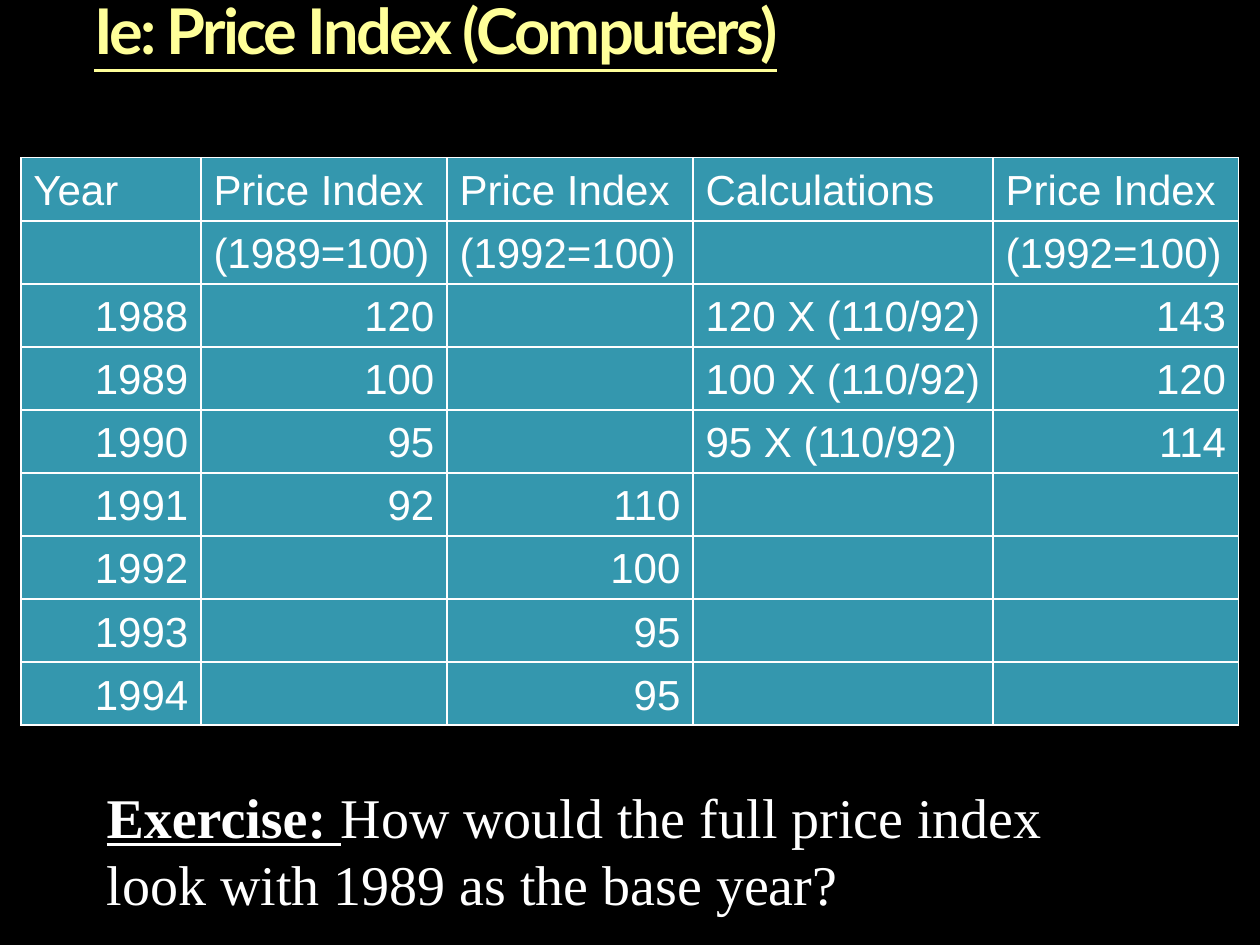
import lxml.etree
import pptx
import pptx.dml.color
import pptx.enum.text
import pptx.oxml.ns
import pptx.util

Cm, Pt = pptx.util.Cm, pptx.util.Pt
qn = pptx.oxml.ns.qn
ALIGN = pptx.enum.text.PP_ALIGN
ANCHOR = pptx.enum.text.MSO_ANCHOR
GROW = pptx.enum.text.MSO_AUTO_SIZE.SHAPE_TO_FIT_TEXT

WHITE, TEAL, BLACK = "FFFFFF", "3497AE", "000000"
GLOW = [(0, "FFFFB9"), (36, "FFFF99"), (86, "F6AE1E")]
WIDTHS = [3.63, 4.96, 4.96, 6.05, 4.95]
ROWS = [
    ["Year", "Price Index", "Price Index", "Calculations", "Price Index"],
    ["", "(1989=100)", "(1992=100)", "", "(1992=100)"],
    ["1988", "120", "", "120 X (110/92)", "143"],
    ["1989", "100", "", "100 X (110/92)", "120"],
    ["1990", "95", "", "95 X (110/92)", "114"],
    ["1991", "92", "110", "", ""],
    ["1992", "", "100", "", ""],
    ["1993", "", "95", "", ""],
    ["1994", "", "95", "", ""],
]


def tint(code):
    """Turn a hex string into a colour."""
    return pptx.dml.color.RGBColor.from_string(code)


def style(item, form):
    """Set each attribute named in a dict of format values."""
    for name, value in form.items():
        setattr(item, name, value)


def place(shape, box):
    """Move a shape to a box given in centimetres."""
    style(shape, dict(zip(("left", "top", "width", "height"), map(Cm, box))))


def write(para, text, form, code=None):
    """Add a run with its font format and colour."""
    run = para.add_run()
    run.text = text
    style(run.font, form)
    if code:
        run.font.fill.solid()
        run.font.fill.fore_color.rgb = tint(code)
    return run


def shade(fill, stops):
    """Give a fill a downward gradient with the given stops."""
    fill.gradient()
    fill.gradient_angle = 270
    stop_list = fill._xPr.find(qn("a:gradFill")).find(qn("a:gsLst"))
    for old in list(stop_list):
        stop_list.remove(old)
    for share, code in stops:
        stop = lxml.etree.SubElement(stop_list, qn("a:gs"), pos=str(share * 1000))
        lxml.etree.SubElement(stop, qn("a:srgbClr"), val=code)


def edge(cell, code, width):
    """Draw all four borders of a cell."""
    props = cell._tc.get_or_add_tcPr()
    for side in ("lnL", "lnR", "lnT", "lnB"):
        line = lxml.etree.SubElement(props, qn("a:" + side), w=str(Pt(width)))
        fill = lxml.etree.SubElement(line, qn("a:solidFill"))
        lxml.etree.SubElement(fill, qn("a:srgbClr"), val=code)


def add_title(slide, box):
    """Format the title in its box."""
    title = slide.shapes.title
    place(title, box)
    frame = title.text_frame
    style(frame, {"margin_left": 0, "margin_top": 0, "margin_right": 0,
                  "margin_bottom": 0, "word_wrap": True, "auto_size": GROW,
                  "vertical_anchor": ANCHOR.TOP})
    para = frame.paragraphs[0]
    style(para, {"alignment": ALIGN.LEFT, "line_spacing": 0.9})
    run = write(para, "Ie: Price Index (Computers)",
                {"name": "Lato", "size": Pt(36), "bold": True, "underline": True})
    shade(run.font.fill, GLOW)
    run._r.get_or_add_rPr().set("spc", "-150")


def fill_cell(cell, text):
    """Fill one cell, with plain numbers set to the right."""
    edge(cell, WHITE, 1)
    cell.fill.solid()
    cell.fill.fore_color.rgb = tint(TEAL)
    if not text:
        return
    cell.vertical_anchor = ANCHOR.BOTTOM
    para = cell.text_frame.paragraphs[0]
    para.alignment = ALIGN.RIGHT if text.isdigit() else ALIGN.LEFT
    props = para._p.get_or_add_pPr()
    props.set("marL", str(Cm(0.95)))
    props.set("indent", str(-Cm(0.95)))
    write(para, text, {"name": "Arial", "size": Pt(24)}, WHITE)


def add_grid(slide, box):
    """Place the price index table in its box."""
    grid = slide.shapes.add_table(len(ROWS), len(WIDTHS), *map(Cm, box)).table
    style(grid, {"first_row": False, "horz_banding": False})
    for col, width in zip(grid.columns, WIDTHS):
        col.width = Cm(width)
    for row, texts in zip(grid.rows, ROWS):
        row.height = Cm(box[3] / len(ROWS))
        for cell, text in zip(row.cells, texts):
            fill_cell(cell, text)


def add_task(slide, box):
    """Place the exercise text in its box."""
    frame = slide.shapes.add_textbox(*map(Cm, box)).text_frame
    style(frame, {"word_wrap": True, "auto_size": GROW})
    para = frame.paragraphs[0]
    para.line_spacing = Pt(38)
    font = {"name": "Times New Roman", "size": Pt(32)}
    write(para, "Exercise: ", {**font, "bold": True, "underline": True}, WHITE)
    write(para, "How would the full price index look with 1989 as the base year?",
          {**font, "bold": False, "underline": False}, WHITE)


def main():
    """Build and save the slide."""
    deck = pptx.Presentation()
    style(deck, {"slide_width": Cm(25.4), "slide_height": Cm(19.05)})
    slide = deck.slides.add_slide(deck.slide_layouts[5])
    slide.background.fill.solid()
    slide.background.fill.fore_color.rgb = tint(BLACK)
    add_title(slide, (1.9, 0, 21.6, 3.18))
    add_grid(slide, (0.42, 3.18, sum(WIDTHS), 10.8))
    add_task(slide, (1.9, 15.67, 21.6, 2.97))
    deck.save("out.pptx")


if __name__ == "__main__":
    main()
